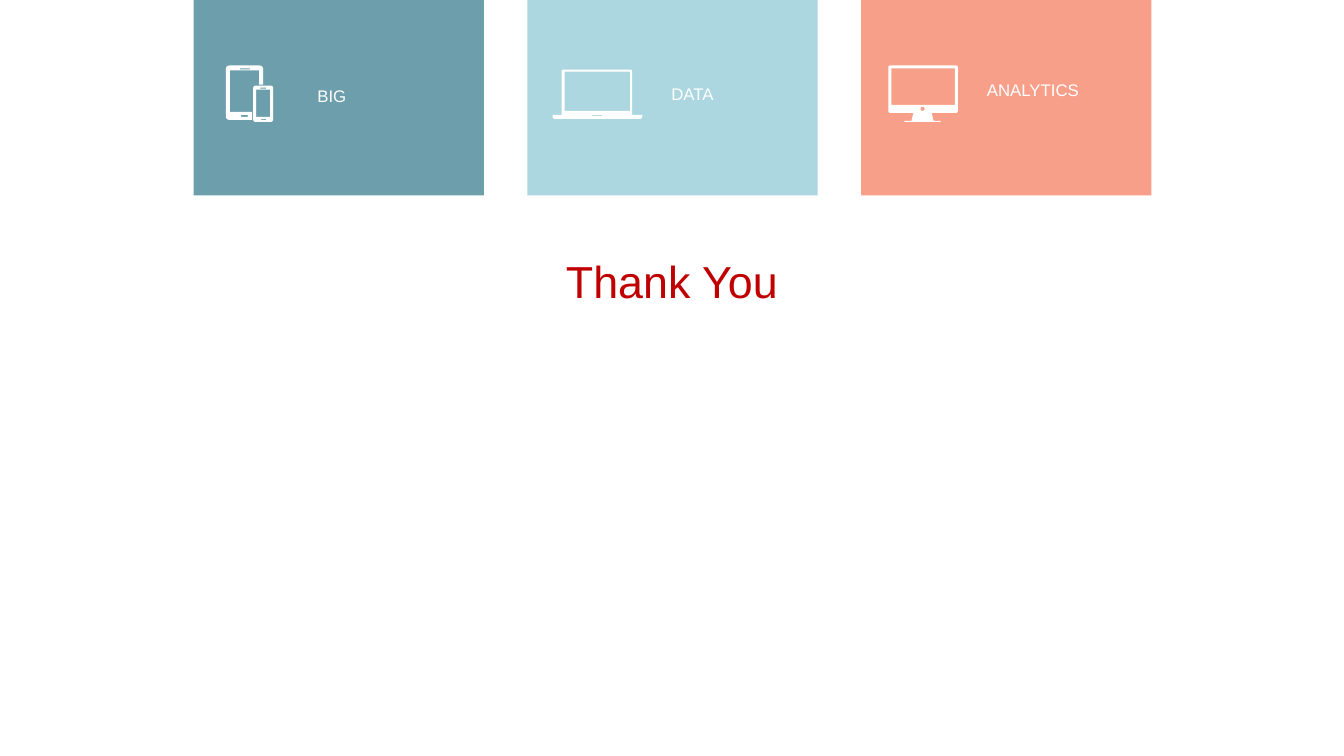
from dataclasses import dataclass
from math import hypot

from lxml.etree import SubElement
from pptx import Presentation
from pptx.dml.color import RGBColor
from pptx.enum.shapes import MSO_SHAPE as Shape
from pptx.enum.text import MSO_ANCHOR as Anchor, MSO_AUTO_SIZE as Fit, PP_ALIGN as Align
from pptx.oxml.ns import qn
from pptx.util import Inches, Pt


@dataclass(frozen=True)
class Theme:
    font: str = "Arial"
    white: str = "FFFFFF"
    red: str = "C00000"
    teal: str = "307689"
    aqua: str = "8AC7D3"
    coral: str = "F47758"
    label: int = 12
    title: int = 32
    alpha: int = 70


def bend(*corners):
    """Turn corners (x, y, optional radius) into an outline with rounded corners."""
    dots = []
    for i, (x, y, *rad) in enumerate(corners):
        if not rad or not rad[0]:
            dots.append((x, y))
            continue
        ends = []
        for near in (corners[i - 1], corners[(i + 1) % len(corners)]):
            dx, dy = near[0] - x, near[1] - y
            part = rad[0] / hypot(dx, dy)
            ends.append((x + dx * part, y + dy * part))
        (ax, ay), (bx, by) = ends
        for step in range(7):
            t = step / 6
            u = 1 - t
            dots.append((u * u * ax + 2 * u * t * x + t * t * bx,
                         u * u * ay + 2 * u * t * y + t * t * by))
    return dots


def box(left, top, right, base, rad=0):
    return bend((left, top, rad), (right, top, rad), (right, base, rad), (left, base, rad))


class Deck:
    def __init__(self, theme):
        self.theme = theme
        self.file = Presentation()
        self.file.slide_width, self.file.slide_height = Inches(13.33), Inches(7.5)
        self.slide = self.file.slides.add_slide(self.file.slide_layouts[5])

    def fill(self, shape, color, alpha=100):
        shape.fill.solid()
        shape.fill.fore_color.rgb = RGBColor.from_string(color)
        if alpha < 100:
            tone = shape.fill._xPr.find(qn("a:solidFill"))[0]
            SubElement(tone, qn("a:alpha")).set("val", str(alpha * 1000))
        shape.line.fill.background()

    def style(self, frame, text, size, color):
        frame.text = text
        frame.word_wrap = True
        para = frame.paragraphs[0]
        para.font.name, para.font.size = self.theme.font, Pt(size)
        para.font.color.rgb = RGBColor.from_string(color)
        return para

    def panel(self, left, color):
        shape = self.slide.shapes.add_shape(
            Shape.RECTANGLE, Inches(left), 0, Inches(2.88), Inches(1.94))
        shape.shadow.inherit = False
        self.fill(shape, color, self.theme.alpha)

    def icon(self, outlines):
        """Draw all outlines as one white shape; inner outlines become holes."""
        lines = [[(Inches(x), Inches(y)) for x, y in line] for line in outlines]
        pen = self.slide.shapes.build_freeform(*lines[0][0])
        for i, line in enumerate(lines):
            if i:
                pen.move_to(*line[0])
            pen.add_line_segments(line[1:], close=True)
        shape = pen.convert_to_shape()
        shape.shadow.inherit = False
        self.fill(shape, self.theme.white)

    def label(self, left, top, text):
        area = self.slide.shapes.add_textbox(
            Inches(left), Inches(top), Inches(1.53), Inches(0.3))
        self.style(area.text_frame, text, self.theme.label, self.theme.white)
        area.text_frame.auto_size = Fit.SHAPE_TO_FIT_TEXT

    def title(self, text):
        head = self.slide.shapes.title
        head.left, head.top = 0, Inches(2.51)
        head.width, head.height = Inches(13.33), Inches(0.54)
        self.fill(head, self.theme.white, self.theme.alpha)
        frame = head.text_frame
        para = self.style(frame, text, self.theme.title, self.theme.red)
        para.alignment = Align.CENTER
        frame.vertical_anchor = Anchor.MIDDLE
        frame.auto_size = Fit.NONE
        frame.margin_left = frame.margin_right = Inches(0.04)
        frame.margin_top = frame.margin_bottom = 0


TABLET = [
    bend((2.24, 0.65, 0.04), (2.61, 0.65, 0.04), (2.61, 0.84), (2.57, 0.84), (2.57, 0.7),
         (2.28, 0.7), (2.28, 1.11), (2.5, 1.11), (2.5, 1.19), (2.24, 1.19, 0.04)),
    box(2.38, 0.68, 2.48, 0.69),
    box(2.39, 1.14, 2.46, 1.16, 0.01),
    box(2.51, 0.85, 2.71, 1.21, 0.03),
    box(2.54, 0.89, 2.68, 1.16),
    box(2.58, 0.87, 2.64, 0.88),
    box(2.59, 1.18, 2.64, 1.19),
]
LAPTOP = [
    bend((5.57, 0.69, 0.02), (6.27, 0.69, 0.02), (6.27, 1.14), (6.37, 1.14),
         (6.37, 1.18, 0.03), (5.48, 1.18, 0.03), (5.48, 1.14), (5.57, 1.14)),
    box(5.6, 0.71, 6.25, 1.1),
    box(5.87, 1.14, 5.97, 1.15),
]
SCREEN = [
    bend((8.81, 0.65, 0.02), (9.5, 0.65, 0.02), (9.5, 1.12, 0.02), (9.24, 1.12),
         (9.26, 1.2), (9.33, 1.2), (9.33, 1.21), (8.97, 1.21), (8.97, 1.2),
         (9.04, 1.2), (9.06, 1.12), (8.81, 1.12, 0.02)),
    box(8.84, 0.68, 9.47, 1.04),
    box(9.13, 1.06, 9.17, 1.1, 0.02),
]


def main():
    theme = Theme()
    deck = Deck(theme)
    cards = [
        (theme.teal, TABLET, 3.05, 0.8, "BIG"),
        (theme.aqua, LAPTOP, 6.56, 0.78, "DATA"),
        (theme.coral, SCREEN, 9.69, 0.74, "ANALYTICS"),
    ]
    for i, (color, icon, left, top, text) in enumerate(cards):
        deck.panel(1.92 + i * 3.31, color)
        deck.icon(icon)
        deck.label(left, top, text)
    deck.title("Thank You")
    deck.file.save("out.pptx")


if __name__ == "__main__":
    main()
